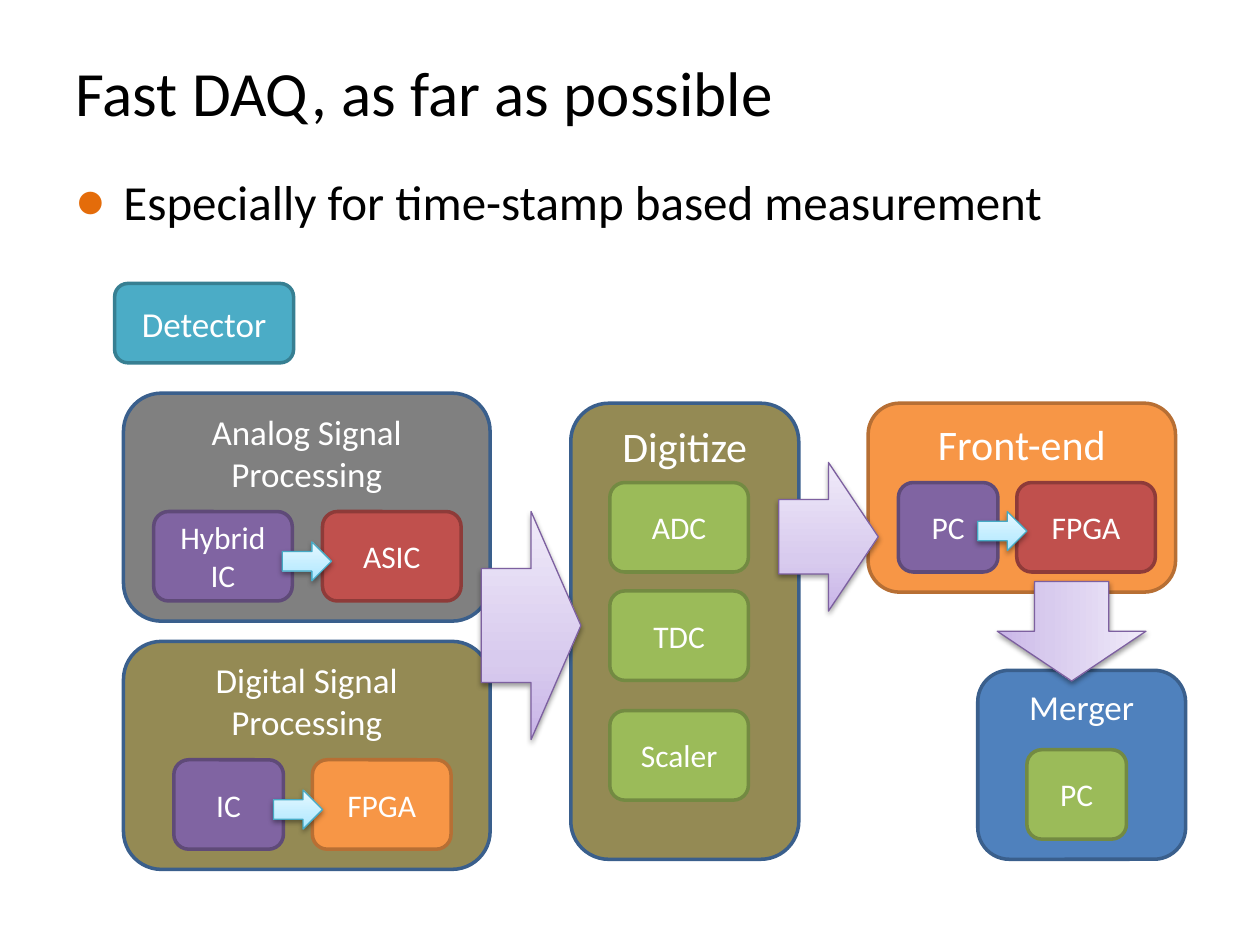
from dataclasses import dataclass

from lxml import etree
from pptx import Presentation
from pptx.dml.color import RGBColor
from pptx.enum import shapes, text
from pptx.oxml import parse_xml
from pptx.oxml.ns import nsdecls, qn
from pptx.util import Inches, Pt

FONT = "Calibri"
WHITE, BLACK = "FFFFFF", "000000"
TEAL, GREY, OLIVE, BLUE = "4BACC6", "808080", "948A54", "4F81BD"
RED, PURPLE, GREEN, ORANGE = "C0504D", "8064A2", "9BBB59", "F79646"
OUTLINES = {TEAL: "377F92", GREY: "3A5F8C", OLIVE: "3A5F8C", BLUE: "3A5F8C",
            RED: "8E3B39", PURPLE: "5F4A78", GREEN: "738A42", ORANGE: "B76F34"}
CHIP_W, SMALL_W, CHIP_H = 1.1, 0.79, 0.71


@dataclass
class Box:
    label: str
    x: float
    y: float
    w: float
    h: float
    fill: str
    size: int = 18
    top: bool = False


@dataclass
class ArrowStyle:
    stops: tuple
    line: str


@dataclass
class Arrow:
    x: float
    y: float
    w: float
    h: float
    style: ArrowStyle
    rotation: int = 0


def rgb(value):
    return RGBColor.from_string(value)


def set_font(p, size: float, color: str) -> None:
    p.font.name, p.font.size = FONT, Pt(size)
    p.font.color.rgb = rgb(color)


def place(sp, x: float, y: float, w: float, h: float) -> None:
    sp.left, sp.top, sp.width, sp.height = map(Inches, (x, y, w, h))


def add_shape(s, kind, item, line: str, width: float):
    sp = s.shapes.add_shape(kind, *map(Inches, (item.x, item.y, item.w, item.h)))
    sp.shadow.inherit = False
    sp.line.color.rgb = rgb(line)
    sp.line.width = Pt(width)
    return sp


def add_box(s, box: Box) -> None:
    sp = add_shape(s, shapes.MSO_SHAPE.ROUNDED_RECTANGLE, box, OUTLINES[box.fill], 2)
    sp.fill.solid()
    sp.fill.fore_color.rgb = rgb(box.fill)
    tf = sp.text_frame
    tf.word_wrap = True
    tf.vertical_anchor = text.MSO_ANCHOR.TOP if box.top else text.MSO_ANCHOR.MIDDLE
    tf.text = box.label
    for p in tf.paragraphs:
        p.alignment = text.PP_ALIGN.CENTER
        set_font(p, box.size, WHITE)


def add_arrow(s, arrow: Arrow) -> None:
    sp = add_shape(s, shapes.MSO_SHAPE.RIGHT_ARROW, arrow, arrow.style.line, 0.75)
    sp.rotation = arrow.rotation
    # Three-stop gradient, darkest at the bottom
    sp.fill.gradient()
    sp.fill.gradient_angle = 90
    stops = sp._element.spPr.find(qn("a:gradFill")).find(qn("a:gsLst"))
    for old in list(stops):
        stops.remove(old)
    for pos, color in zip((0, 35, 100), arrow.style.stops):
        stops.append(parse_xml(f'<a:gs {nsdecls("a")} pos="{pos * 1000}">'
                               f'<a:srgbClr val="{color}"/></a:gs>'))
    # Soft shadow below
    effects = sp._element.spPr.find(qn("a:effectLst"))
    effects.append(parse_xml(
        f'<a:outerShdw {nsdecls("a")} blurRad="{Pt(3.1)}" dist="{Pt(1.6)}" '
        f'dir="5400000" rotWithShape="0"><a:srgbClr val="{BLACK}">'
        '<a:alpha val="38000"/></a:srgbClr></a:outerShdw>'))


def fill_placeholder(sp, label: str, size: int, anchor):
    tf = sp.text_frame
    tf.text = label
    tf.auto_size = text.MSO_AUTO_SIZE.NONE
    tf.vertical_anchor = anchor
    p = tf.paragraphs[0]
    p.alignment = text.PP_ALIGN.LEFT
    set_font(p, size, BLACK)
    return p


def add_bullet(p, char: str, color: str, indent: float) -> None:
    pPr = p._p.get_or_add_pPr()
    pPr.set("marL", str(Inches(indent)))
    pPr.set("indent", str(-Inches(indent)))
    bullet = [parse_xml(f'<a:buClr {nsdecls("a")}><a:srgbClr val="{color}"/></a:buClr>'),
              etree.Element(qn("a:buFont"), typeface=FONT),
              etree.Element(qn("a:buChar"), char=char)]
    for i, el in enumerate(bullet):
        pPr.insert(i, el)


SKY = ArrowStyle(("A7E6FF", "C1EDFF", "E7F8FF"), "46AAC5")
LILAC = ArrowStyle(("C9B5E8", "D8CBEE", "F0EAF9"), "7D60A0")

BOXES = [
    Box("Detector", 0.91, 2.25, 1.42, 0.63, TEAL, 20),
    # Signal processing
    Box("Analog Signal Processing", 0.98, 3.12, 2.91, 1.81, GREY, 20, True),
    Box("ASIC", 2.56, 4.06, CHIP_W, CHIP_H, RED),
    Box("Hybrid\nIC", 1.22, 4.06, CHIP_W, CHIP_H, PURPLE),
    Box("Digital Signal Processing", 0.98, 5.09, 2.91, 1.81, OLIVE, 20, True),
    Box("IC", 1.38, 6.03, 0.87, CHIP_H, PURPLE),
    Box("FPGA", 2.48, 6.03, CHIP_W, CHIP_H, ORANGE),
    # Digitizers
    Box("Digitize", 4.53, 3.2, 1.81, 3.62, OLIVE, 24, True),
    *(Box(label, 4.84, y, CHIP_W, CHIP_H, GREEN)
      for label, y in (("ADC", 3.83), ("TDC", 4.69), ("Scaler", 5.64))),
    # Front-end and merger
    Box("Front-end", 6.89, 3.2, 2.44, 1.5, ORANGE, 24, True),
    Box("PC", 7.13, 3.83, SMALL_W, CHIP_H, PURPLE),
    Box("FPGA", 8.07, 3.83, CHIP_W, CHIP_H, RED),
    Box("Merger", 7.76, 5.32, 1.65, 1.5, BLUE, 20, True),
    Box("PC", 8.15, 5.95, SMALL_W, CHIP_H, GREEN),
]

ARROWS = [
    # Between chips
    *(Arrow(x, y, 0.39, 0.31, SKY) for x, y in ((2.24, 4.3), (2.17, 6.27), (7.76, 4.06))),
    # Between stages
    Arrow(3.82, 4.06, 0.79, 1.81, LILAC),
    Arrow(6.18, 3.67, 0.79, 1.18, LILAC),
    Arrow(8.11, 4.42, 0.79, 1.18, LILAC, 90),
]


def main() -> None:
    prs = Presentation()
    prs.slide_width, prs.slide_height = Inches(10), Inches(7.5)
    s = prs.slides.add_slide(prs.slide_layouts[1])

    # Title and bullet
    title, body = s.shapes.title, s.placeholders[1]
    place(title, 0.5, 0.3, 9, 0.85)
    fill_placeholder(title, "Fast DAQ, as far as possible", 36, text.MSO_ANCHOR.MIDDLE)
    place(body, 0.5, 1.31, 9, 0.71)
    p = fill_placeholder(body, "Especially for time-stamp based measurement", 28,
                         text.MSO_ANCHOR.TOP)
    add_bullet(p, "●", "E46C0A", 0.38)

    # Data flow diagram
    for box in BOXES:
        add_box(s, box)
    for arrow in ARROWS:
        add_arrow(s, arrow)

    prs.save("out.pptx")


if __name__ == "__main__":
    main()
